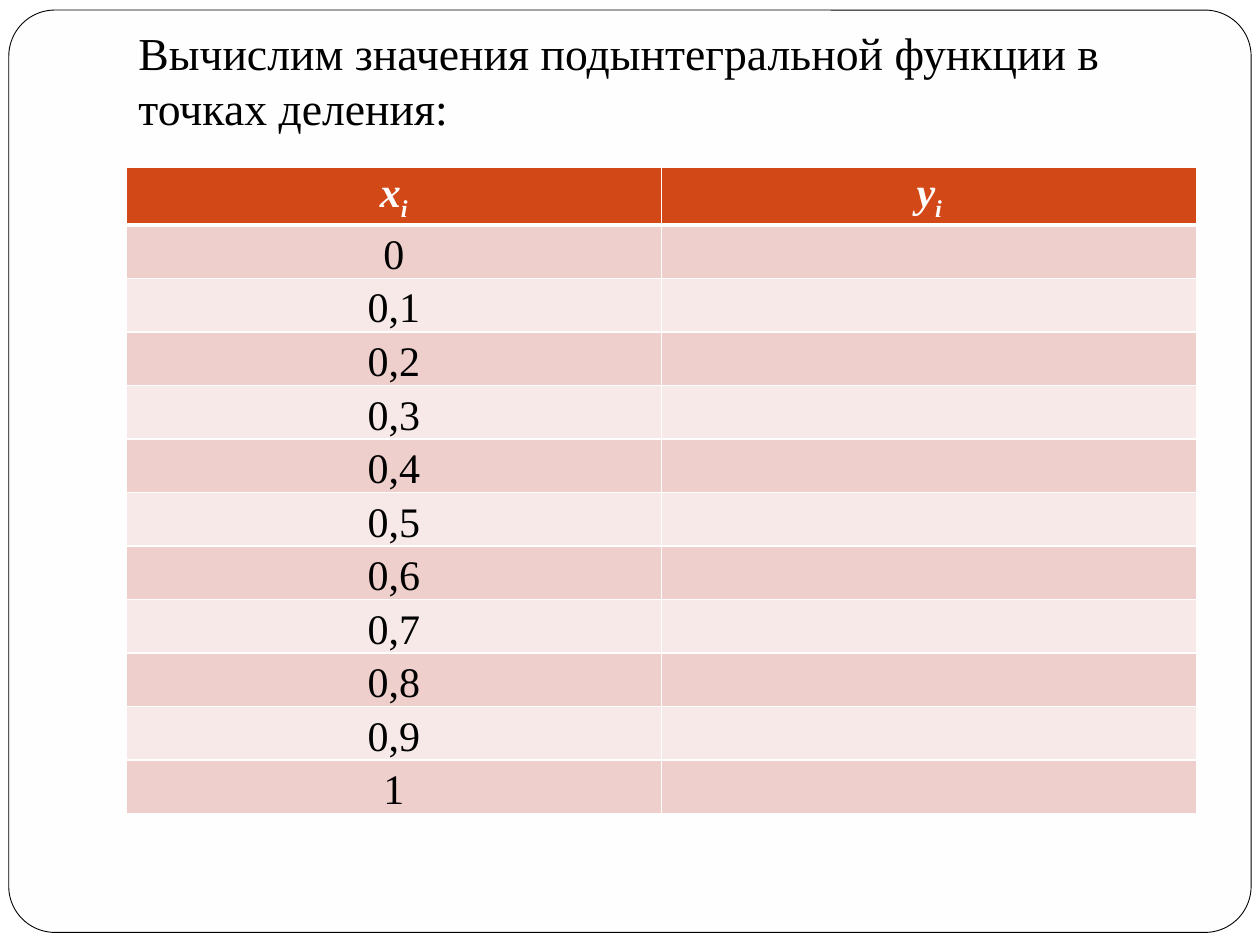
import dataclasses

import pptx
import pptx.dml.color
import pptx.enum.shapes
import pptx.enum.text
import pptx.oxml.ns
import pptx.util
from lxml import etree

RGB = pptx.dml.color.RGBColor
ANCHOR = pptx.enum.text.MSO_ANCHOR
ALIGN = pptx.enum.text.PP_ALIGN
SHAPE = pptx.enum.shapes.MSO_SHAPE
Inches = pptx.util.Inches
Pt = pptx.util.Pt

BLACK = RGB(0x00, 0x00, 0x00)
WHITE = RGB(0xFF, 0xFF, 0xFF)
PAPER = RGB(0xFF, 0xFE, 0xFF)
ORANGE = RGB(0xD3, 0x48, 0x17)
BANDS = (RGB(0xEF, 0xCF, 0xCC), RGB(0xF7, 0xE9, 0xE8))

SLIDE_W, SLIDE_H = 10, 7.5
LEFT, WIDTH = 0.1 * SLIDE_W, 0.85 * SLIDE_W
TABLE_TOP, ROW_H = 1.33, 0.425
TITLE = "Вычислим значения подынтегральной функции в точках деления:"
POINTS = ["0", *(f"0,{n}" for n in range(1, 10)), "1"]


@dataclasses.dataclass
class Row:
    """Each cell holds a symbol and its subscript."""
    cells: tuple[tuple[str, str], ...]
    fill: RGB
    color: RGB = BLACK
    header: bool = False
    top: float = 1
    bottom: float = 1


def add_text(p, text: str, *, size: float = 24, color: RGB = BLACK,
             bold: bool = False, italic: bool = False, baseline: int = 0) -> None:
    r = p.add_run()
    r.text = text
    f = r.font
    f.name, f.size, f.bold, f.italic = "Times New Roman", Pt(size), bold, italic
    f.color.rgb = color
    if baseline:
        r._r.get_or_add_rPr().set("baseline", str(baseline * 1000))


def add_panel(s, kind, box: tuple[float, ...], fill: RGB):
    sp = s.shapes.add_shape(kind, *map(Inches, box))
    sp.shadow.inherit = False
    sp.fill.solid()
    sp.fill.fore_color.rgb = fill
    sp.line.fill.background()
    return sp


def set_borders(cell, **widths: float) -> None:
    """Draw cell borders; keywords L, R, T, B give widths in points."""
    tc_pr = cell._tc.get_or_add_tcPr()
    for side, width in widths.items():
        ln = etree.SubElement(tc_pr, pptx.oxml.ns.qn(f"a:ln{side}"), w=str(Pt(width)))
        fill = etree.SubElement(ln, pptx.oxml.ns.qn("a:solidFill"))
        etree.SubElement(fill, pptx.oxml.ns.qn("a:srgbClr"), val=str(PAPER))


def fill_row(cells, row: Row) -> None:
    for cell, (symbol, index) in zip(cells, row.cells):
        set_borders(cell, L=1, R=1, T=row.top, B=row.bottom)
        cell.fill.solid()
        cell.fill.fore_color.rgb = row.fill
        cell.margin_left = cell.margin_right = Inches(0.07)
        cell.margin_top = cell.margin_bottom = 0
        cell.vertical_anchor = ANCHOR.MIDDLE if row.header else ANCHOR.BOTTOM
        p = cell.text_frame.paragraphs[0]
        p.alignment = ALIGN.CENTER
        for text, baseline in ((symbol, 0), (index, -25)):
            if text:
                add_text(p, text, color=row.color, bold=row.header,
                         italic=row.header, baseline=baseline)


def add_value_table(s) -> None:
    rows = [Row((("x", "i"), ("y", "i")), ORANGE, PAPER, header=True, bottom=3)]
    rows += [Row(((point, ""), ("", "")), BANDS[n % 2], top=1 if n else 3)
             for n, point in enumerate(POINTS)]
    table = s.shapes.add_table(len(rows), 2, Inches(LEFT), Inches(TABLE_TOP),
                               Inches(WIDTH), Inches(ROW_H * len(rows))).table
    for table_row, row in zip(table.rows, rows):
        table_row.height = Inches(ROW_H)
        fill_row(table_row.cells, row)


def add_title(s) -> None:
    tf = s.shapes.add_textbox(*map(Inches, (LEFT, 0.3, WIDTH, 0.87))).text_frame
    tf.word_wrap = True
    tf.vertical_anchor = ANCHOR.BOTTOM
    tf.margin_bottom = Inches(0.1)
    add_text(tf.paragraphs[0], TITLE, size=26.1)


def main() -> None:
    prs = pptx.Presentation()
    prs.slide_width, prs.slide_height = Inches(SLIDE_W), Inches(SLIDE_H)
    s = prs.slides.add_slide(prs.slide_layouts[6])
    s.background.fill.solid()
    s.background.fill.fore_color.rgb = PAPER
    add_panel(s, SHAPE.RECTANGLE, (0, 0, SLIDE_W, SLIDE_H), WHITE)
    frame = add_panel(s, SHAPE.ROUNDED_RECTANGLE, (0.07, 0.08, 9.86, 7.32), PAPER)
    frame.adjustments[0] = 0.05
    frame.line.color.rgb = BLACK
    frame.line.width = Pt(0.5)
    add_title(s)
    add_value_table(s)
    prs.save("out.pptx")


if __name__ == "__main__":
    main()
